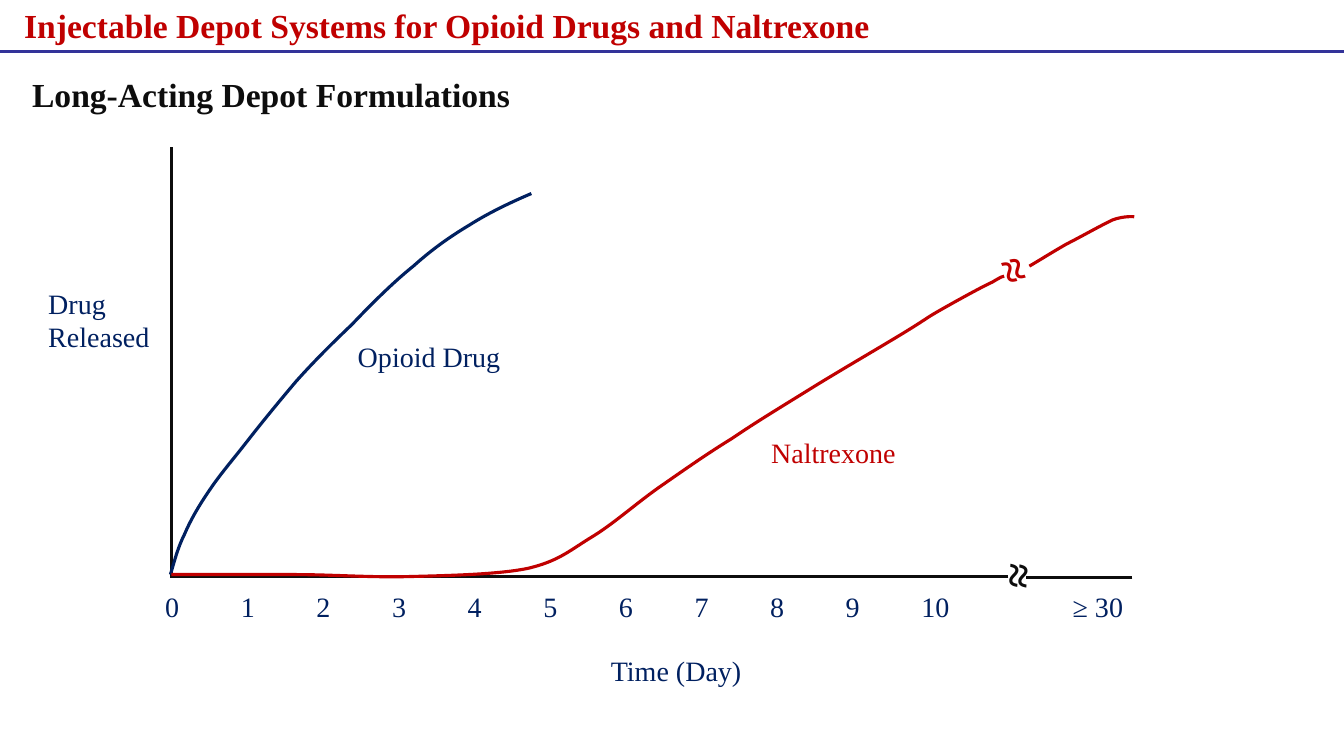
from lxml import etree
from pptx import Presentation
from pptx.dml.color import RGBColor
from pptx.enum import shapes, text
from pptx.oxml import ns
from pptx.util import Inches, Pt

FONT = "Times New Roman"
RED, NAVY, BLACK, RULE = "C00000", "002060", "0D0D0D", "333399"

# Text: lines, (left, top, width, height), size, colour, bold, rotation
LABELS = [
    (["Injectable Depot Systems for Opioid Drugs and Naltrexone"],
     (0.14, 0, 9.78, 0.47), 24, RED, True, 0),
    (["Long-Acting Depot Formulations"], (0.22, 0.68, 9.23, 0.54), 24, BLACK, True, 0),
    (["Drug", "Released"], (0.38, 2.79, 1.32, 0.77), 20, NAVY, False, 0),
    (["Opioid Drug"], (3.45, 3.32, 1.7, 0.44), 20, NAVY, False, 0),
    (["Naltrexone"], (7.55, 4.27, 1.7, 0.44), 20, RED, False, 0),
    (["Time (Day)"], (5.96, 6.43, 1.6, 0.44), 20, NAVY, False, 0),
    (["≈"], (9.85, 2.4, 0.39, 0.64), 32, RED, True, 247.9),
    (["≈"], (9.88, 5.42, 0.39, 0.64), 32, BLACK, True, 274.2),
]
DAYS = [str(day) for day in range(11)] + ["", "≥ 30"]
DAYS_BOX = (1.54, 5.8, 10.33, 0.44)
DAY_STEP = 0.75

# Straight lines: start, end, colour
LINES = [
    ((0, 0.51), (13.33, 0.51), RULE),
    ((1.7, 1.46), (1.7, 5.72), BLACK),
    ((10, 5.72), (1.69, 5.72), BLACK),
    ((11.23, 5.73), (10.18, 5.73), BLACK),
]

# Curves: colour, start, then segments: (end) or (control, control, end)
CURVES = [
    (NAVY, (1.69, 5.7), [
        ((1.73, 5.57), (1.76, 5.44), (1.83, 5.3)),
        ((1.89, 5.16), (1.97, 5.02), (2.08, 4.86)),
        ((2.18, 4.71), (2.31, 4.56), (2.45, 4.38)),
        ((2.59, 4.2), (2.77, 3.98), (2.94, 3.78)),
        ((3.11, 3.59), (3.29, 3.41), (3.49, 3.22)),
        ((3.68, 3.02), (3.9, 2.8), (4.1, 2.64)),
        ((4.29, 2.47), (4.46, 2.35), (4.66, 2.23)),
        ((4.85, 2.11), (5.06, 2.01), (5.27, 1.92))]),
    (RED, (1.7, 5.7), [
        ((2.91, 5.7),),
        ((3.3, 5.7), (3.67, 5.73), (4.05, 5.72)),
        ((4.44, 5.71), (4.93, 5.7), (5.23, 5.64)),
        ((5.53, 5.57), (5.64, 5.47), (5.85, 5.34)),
        ((6.07, 5.21), (6.29, 5.01), (6.53, 4.84)),
        ((6.76, 4.68), (7, 4.51), (7.26, 4.35)),
        ((7.51, 4.18), (7.76, 4.03), (8.05, 3.85)),
        ((8.34, 3.67), (8.79, 3.41), (9, 3.28)),
        ((9.21, 3.15), (9.18, 3.16), (9.32, 3.08)),
        ((9.46, 3), (9.73, 2.85), (9.84, 2.8)),
        ((9.94, 2.74), (9.95, 2.74), (9.96, 2.74))]),
    (RED, (10.21, 2.64), [
        ((10.33, 2.57), (10.44, 2.5), (10.58, 2.42)),
        ((10.72, 2.35), (10.93, 2.23), (11.04, 2.18)),
        ((11.15, 2.14), (11.25, 2.15), (11.25, 2.15))]),
]


def color(value):
    return RGBColor.from_string(value)


def to_emu(point):
    return tuple(Inches(length) for length in point)


def style_line(line, value):
    line.color.rgb = color(value)
    line.width = Pt(2.25)


def add_line(slide, start, end, value):
    connector = slide.shapes.add_connector(
        shapes.MSO_CONNECTOR.STRAIGHT, *to_emu(start + end))
    style_line(connector.line, value)
    etree.SubElement(connector.element.spPr, ns.qn("a:effectLst"))


def add_curve(slide, value, start, segments):
    builder = slide.shapes.build_freeform(*to_emu(start))
    builder.add_line_segments([to_emu(segment[-1]) for segment in segments], close=False)
    shape = builder.convert_to_shape()
    shape.fill.background()
    shape.shadow.inherit = False
    style_line(shape.line, value)
    # Bend each straight step that has control points
    steps = list(shape.element.iter(ns.qn("a:lnTo")))
    for step, segment in zip(steps, segments):
        if len(segment) == 1:
            continue
        bend = etree.Element(ns.qn("a:cubicBezTo"))
        for x, y in map(to_emu, segment):
            etree.SubElement(bend, ns.qn("a:pt"),
                             x=str(x - shape.left), y=str(y - shape.top))
        step.getparent().replace(step, bend)


def add_label(slide, lines, box, size, value, bold=False, rotation=0):
    shape = slide.shapes.add_textbox(*to_emu(box))
    shape.rotation = rotation
    frame = shape.text_frame
    frame.word_wrap = True
    frame.vertical_anchor = text.MSO_ANCHOR.TOP
    for index, line in enumerate(lines):
        paragraph = frame.paragraphs[0] if index == 0 else frame.add_paragraph()
        run = paragraph.add_run()
        run.text = line
        run.font.name = FONT
        run.font.size = Pt(size)
        run.font.bold = bold
        run.font.color.rgb = color(value)
    return shape


def add_tabs(paragraph, count, step):
    tabs = etree.SubElement(paragraph._p.get_or_add_pPr(), ns.qn("a:tabLst"))
    for index in range(1, count + 1):
        etree.SubElement(tabs, ns.qn("a:tab"), pos=str(Inches(index * step)), algn="l")


def main():
    presentation = Presentation()
    presentation.slide_width = Inches(13.33)
    presentation.slide_height = Inches(7.5)
    slide = presentation.slides.add_slide(presentation.slide_layouts[6])

    # Heading rule and axes
    for line in LINES:
        add_line(slide, *line)

    # Release curves
    for curve in CURVES:
        add_curve(slide, *curve)

    # Headings, labels and break marks
    for label in LABELS:
        add_label(slide, *label)

    # Day scale
    scale = add_label(slide, ["\t".join(DAYS)], DAYS_BOX, 20, NAVY)
    add_tabs(scale.text_frame.paragraphs[0], len(DAYS) - 1, DAY_STEP)

    presentation.save("out.pptx")


if __name__ == "__main__":
    main()
